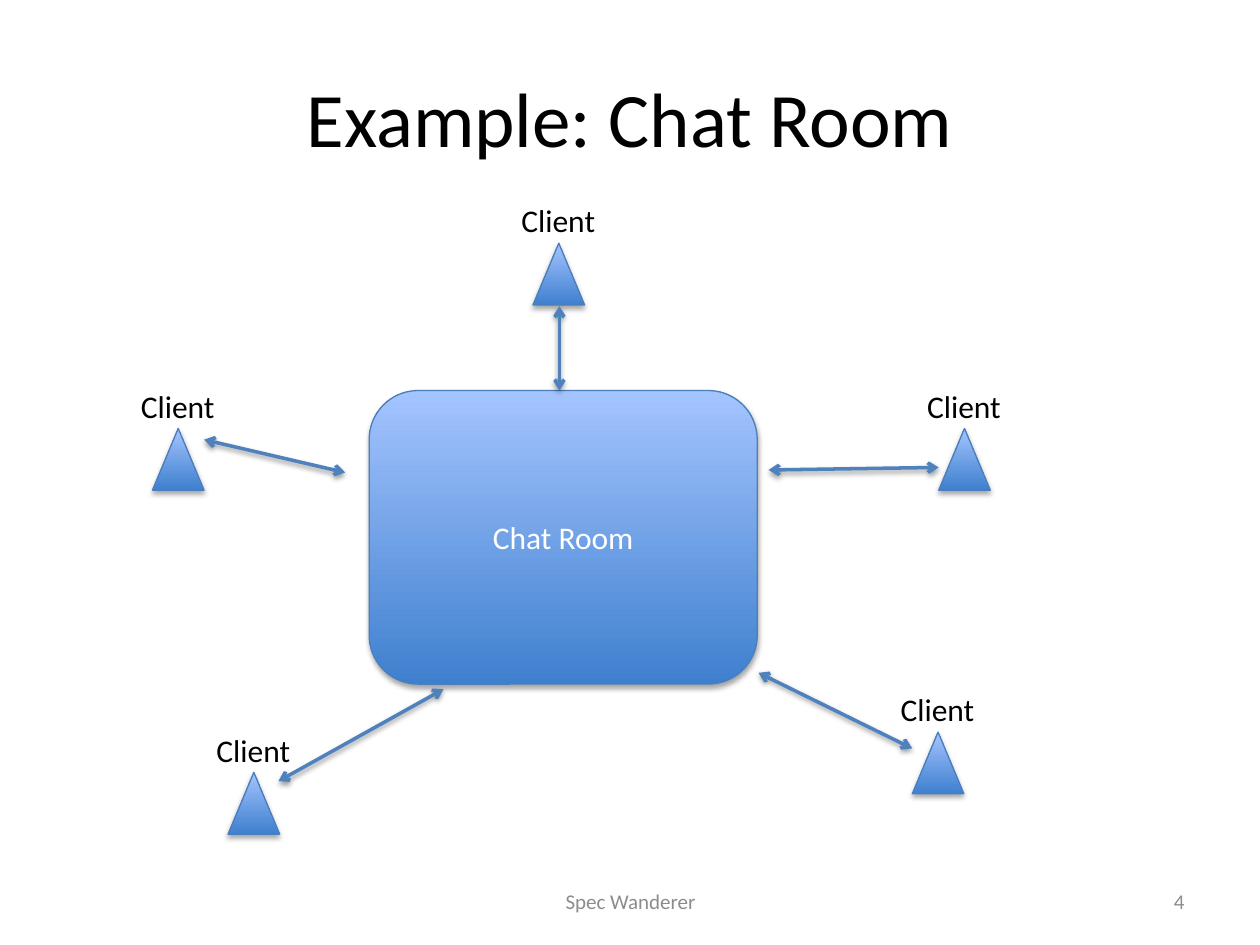
from typing import NamedTuple

from lxml.etree import SubElement
from pptx import Presentation
from pptx.dml.color import RGBColor
from pptx.enum.shapes import MSO_CONNECTOR, MSO_SHAPE
from pptx.enum.text import MSO_ANCHOR, PP_ALIGN
from pptx.oxml.ns import qn
from pptx.util import Inches, Pt

BLACK = RGBColor(0x00, 0x00, 0x00)
WHITE = RGBColor(0xFF, 0xFF, 0xFF)
GRAY = RGBColor(0x8C, 0x8C, 0x8C)
DARK = RGBColor(0x3F, 0x80, 0xCE)
LIGHT = RGBColor(0xA4, 0xC4, 0xFF)
EDGE = RGBColor(0x4B, 0x7E, 0xBC)
LINK = RGBColor(0x4F, 0x81, 0xBD)
FONT = "Calibri"


class Box(NamedTuple):
    left: float
    top: float
    width: float
    height: float

    def place(self) -> list:
        return [Inches(side) for side in self]


class Client(NamedTuple):
    left: float
    top: float


class Arrow(NamedTuple):
    x1: float
    y1: float
    x2: float
    y2: float


class Label(NamedTuple):
    text: str
    box: Box
    size: int
    color: RGBColor
    align: PP_ALIGN


ROOM = Box(2.93, 3.1, 3.08, 2.33)

CLIENTS = [
    Client(4.23, 1.93),
    Client(7.24, 5.81),
    Client(1.21, 3.4),
    Client(7.45, 3.4),
    Client(1.81, 6.13),
]

ARROWS = [
    Arrow(1.62, 3.49, 2.74, 3.75),
    Arrow(4.44, 2.43, 4.44, 3.1),
    Arrow(6.02, 5.34, 7.24, 5.94),
    Arrow(6.1, 3.73, 7.45, 3.71),
    Arrow(2.21, 6.2, 3.52, 5.47),
]

LABELS = [
    Label("Example: Chat Room", Box(0.5, 0.3, 9, 1.25), 44, BLACK, PP_ALIGN.CENTER),
    Label("4", Box(7.17, 6.95, 2.33, 0.4), 12, GRAY, PP_ALIGN.RIGHT),
    Label("Spec Wanderer", Box(3.42, 6.95, 3.17, 0.4), 12, GRAY, PP_ALIGN.CENTER),
]


def write(shape, text: str, size: int, color: RGBColor, align: PP_ALIGN) -> None:
    frame = shape.text_frame
    frame.text = text
    frame.vertical_anchor = MSO_ANCHOR.MIDDLE
    line = frame.paragraphs[0]
    line.alignment = align
    font = line.runs[0].font
    font.name = FONT
    font.size = Pt(size)
    font.color.rgb = color


def add_shade(shape, dist: float, alpha: int) -> None:
    effects = SubElement(shape._element.spPr, qn("a:effectLst"))
    shade = SubElement(
        effects, qn("a:outerShdw"), blurRad=str(Pt(3.1)), dist=str(Pt(dist)),
        dir="5400000", rotWithShape="0",
    )
    color = SubElement(shade, qn("a:srgbClr"), val=str(BLACK))
    SubElement(color, qn("a:alpha"), val=str(alpha * 1000))


def add_solid(shapes, kind: MSO_SHAPE, box: Box):
    shape = shapes.add_shape(kind, *box.place())
    shape.fill.gradient()
    shape.fill.gradient_angle = 90
    for stop, color, spot in zip(shape.fill.gradient_stops, (DARK, LIGHT), (0, 1)):
        stop.color.rgb = color
        stop.position = spot
    shape.line.color.rgb = EDGE
    shape.line.width = Pt(0.75)
    add_shade(shape, 1.8, 35)
    return shape


def add_label(shapes, label: Label):
    shape = shapes.add_textbox(*label.box.place())
    shape.text_frame.word_wrap = True
    write(shape, label.text, label.size, label.color, label.align)
    return shape


def add_client(shapes, client: Client) -> None:
    group = shapes.add_group_shape().shapes
    add_solid(group, MSO_SHAPE.ISOSCELES_TRIANGLE, Box(*client, 0.41, 0.49))
    box = Box(client.left - 0.19, client.top - 0.38, 0.8, 0.4)
    name = add_label(group, Label("Client", box, 18, BLACK, PP_ALIGN.LEFT))
    name.text_frame.word_wrap = False
    name.text_frame.vertical_anchor = MSO_ANCHOR.TOP


def add_arrow(shapes, arrow: Arrow) -> None:
    ends = [Inches(value) for value in arrow]
    link = shapes.add_connector(MSO_CONNECTOR.STRAIGHT, *ends)
    link.line.color.rgb = LINK
    link.line.width = Pt(2)
    for end in ("a:headEnd", "a:tailEnd"):
        SubElement(link.line._get_or_add_ln(), qn(end), type="arrow")
    add_shade(link, 1.6, 38)


def main() -> None:
    deck = Presentation()
    deck.slide_width = Inches(10)
    deck.slide_height = Inches(7.5)
    shapes = deck.slides.add_slide(deck.slide_layouts[6]).shapes
    room = add_solid(shapes, MSO_SHAPE.ROUNDED_RECTANGLE, ROOM)
    write(room, "Chat Room", 18, WHITE, PP_ALIGN.CENTER)
    for client in CLIENTS:
        add_client(shapes, client)
    for arrow in ARROWS:
        add_arrow(shapes, arrow)
    for label in LABELS:
        add_label(shapes, label)
    deck.save("out.pptx")


if __name__ == "__main__":
    main()
